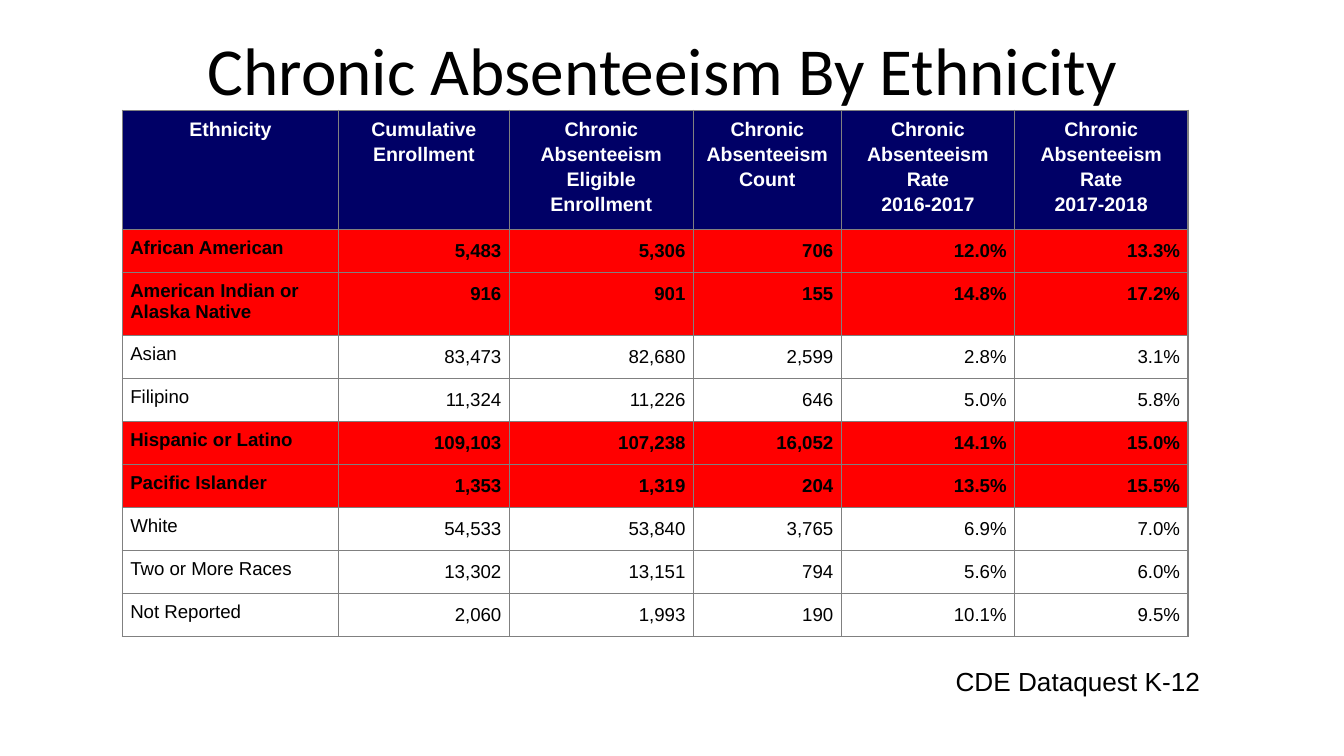
"""Build a slide with a table of chronic absenteeism by ethnicity."""
from lxml.etree import SubElement
from pptx import Presentation
from pptx.dml.color import RGBColor
from pptx.enum.text import MSO_ANCHOR, PP_ALIGN
from pptx.oxml.ns import qn
from pptx.util import Inches, Pt

BLACK = RGBColor(0x00, 0x00, 0x00)
WHITE = RGBColor(0xFF, 0xFF, 0xFF)
NAVY = RGBColor(0x00, 0x00, 0x66)
RED = RGBColor(0xFF, 0x00, 0x00)
GRAY = RGBColor(0x80, 0x80, 0x80)

SLIDE_WIDTH = 10
SLIDE_HEIGHT = SLIDE_WIDTH * 9 / 16

TITLE_FONT = {"name": "Calibri", "size": Pt(36)}
SOURCE_FONT = {"name": "Arial", "size": Pt(14)}
HEADER_FONT = {"name": "Arial", "size": Pt(10.5), "bold": True}
BODY_FONT = {"name": "Arial", "size": Pt(10), "bold": False}
HIGHLIGHT_FONT = {**BODY_FONT, "bold": True}

LABEL_FORMAT = {"alignment": PP_ALIGN.LEFT, "line_spacing": 1.0}
NUMBER_FORMAT = {"alignment": PP_ALIGN.RIGHT, "line_spacing": 1.15}
HEADER_FORMAT = {"alignment": PP_ALIGN.CENTER, "line_spacing": 1.15}

COLUMN_WIDTHS = [1.61, 1.27, 1.37, 1.1, 1.29, 1.29]
HEADER_HEIGHT, ROW_HEIGHT, TALL_ROW_HEIGHT = 0.89, 0.32, 0.47

HEADERS = [
    "Ethnicity",
    "Cumulative\nEnrollment",
    "Chronic\nAbsenteeism\nEligible\nEnrollment",
    "Chronic\nAbsenteeism\nCount",
    "Chronic\nAbsenteeism\nRate\n2016-2017",
    "Chronic\nAbsenteeism\nRate\n2017-2018",
]
ROWS = [
    ["African American", "5,483", "5,306", "706", "12.0%", "13.3%"],
    ["American Indian or Alaska Native", "916", "901", "155", "14.8%", "17.2%"],
    ["Asian", "83,473", "82,680", "2,599", "2.8%", "3.1%"],
    ["Filipino", "11,324", "11,226", "646", "5.0%", "5.8%"],
    ["Hispanic or Latino", "109,103", "107,238", "16,052", "14.1%", "15.0%"],
    ["Pacific Islander", "1,353", "1,319", "204", "13.5%", "15.5%"],
    ["White", "54,533", "53,840", "3,765", "6.9%", "7.0%"],
    ["Two or More Races", "13,302", "13,151", "794", "5.6%", "6.0%"],
    ["Not Reported", "2,060", "1,993", "190", "10.1%", "9.5%"],
]
HIGHLIGHTED = {
    "African American",
    "American Indian or Alaska Native",
    "Hispanic or Latino",
    "Pacific Islander",
}
TALL_ROW = "American Indian or Alaska Native"


def apply_format(target, values):
    """Set each named attribute of the target."""
    for name, value in values.items():
        setattr(target, name, value)


def fill_text(text_frame, text, font, color, paragraph_format):
    """Write the text and format each of its paragraphs."""
    text_frame.text = text
    for paragraph in text_frame.paragraphs:
        apply_format(paragraph, paragraph_format)
        for run in paragraph.runs:
            apply_format(run.font, font)
            run.font.color.rgb = color


def set_margins(target, margin):
    """Give the target the same margin on all four sides."""
    for side in ("left", "right", "top", "bottom"):
        setattr(target, f"margin_{side}", Inches(margin))


def add_text(slide, box, text, font, alignment, indent=0):
    """Add a wrapped text box, optionally with its text set further in."""
    shape = slide.shapes.add_textbox(*(Inches(length) for length in box))
    text_frame = shape.text_frame
    text_frame.word_wrap = True
    text_frame.vertical_anchor = MSO_ANCHOR.TOP
    set_margins(text_frame, 0.1)
    text_frame.margin_left = Inches(0.1 + indent)
    fill_text(text_frame, text, font, BLACK, {"alignment": alignment})


def add_borders(cell):
    """Draw a thin gray line on each side of the cell."""
    properties = cell._tc.get_or_add_tcPr()
    for side in ("a:lnL", "a:lnR", "a:lnT", "a:lnB"):
        line = SubElement(properties, qn(side), w=str(Pt(0.75)))
        fill = SubElement(line, qn("a:solidFill"))
        SubElement(fill, qn("a:srgbClr"), val=str(GRAY))


def style_cell(cell, text, font, color, paragraph_format, margin, fill):
    """Fill one table cell with text, borders and background."""
    set_margins(cell, margin)
    cell.vertical_anchor = MSO_ANCHOR.TOP
    fill_text(cell.text_frame, text, font, color, paragraph_format)
    add_borders(cell)
    if fill is None:
        cell.fill.background()
    else:
        cell.fill.solid()
        cell.fill.fore_color.rgb = fill


def add_absenteeism_table(slide):
    """Add the table with its header and highlighted rows."""
    heights = [HEADER_HEIGHT] + [
        TALL_ROW_HEIGHT if row[0] == TALL_ROW else ROW_HEIGHT for row in ROWS
    ]
    table = slide.shapes.add_table(
        len(heights), len(COLUMN_WIDTHS), Inches(0.91), Inches(0.82),
        Inches(sum(COLUMN_WIDTHS)), Inches(sum(heights)),
    ).table
    apply_format(table, {"first_row": False, "horz_banding": False})
    for column, width in zip(table.columns, COLUMN_WIDTHS):
        column.width = Inches(width)
    for row, height in zip(table.rows, heights):
        row.height = Inches(height)
    for column, text in enumerate(HEADERS):
        style_cell(table.cell(0, column), text, HEADER_FONT, WHITE,
                   HEADER_FORMAT, 0.04, NAVY)
    for row, values in enumerate(ROWS, start=1):
        highlighted = values[0] in HIGHLIGHTED
        font = HIGHLIGHT_FONT if highlighted else BODY_FONT
        fill = RED if highlighted else None
        for column, text in enumerate(values):
            paragraph_format = NUMBER_FORMAT if column else LABEL_FORMAT
            style_cell(table.cell(row, column), text, font, BLACK,
                       paragraph_format, 0.06, fill)


def main():
    """Create the presentation and save it."""
    presentation = Presentation()
    presentation.slide_width = Inches(SLIDE_WIDTH)
    presentation.slide_height = Inches(SLIDE_HEIGHT)
    slide = presentation.slides.add_slide(presentation.slide_layouts[6])
    add_text(slide, (0.84, 0.11, 8.18, 0.63), "Chronic Absenteeism By Ethnicity",
             TITLE_FONT, PP_ALIGN.CENTER)
    add_absenteeism_table(slide)
    add_text(slide, (6.53, 4.85, 2.58, 0.37), "CDE Dataquest K-12",
             SOURCE_FONT, PP_ALIGN.LEFT, indent=0.48)
    presentation.save("out.pptx")


if __name__ == "__main__":
    main()
